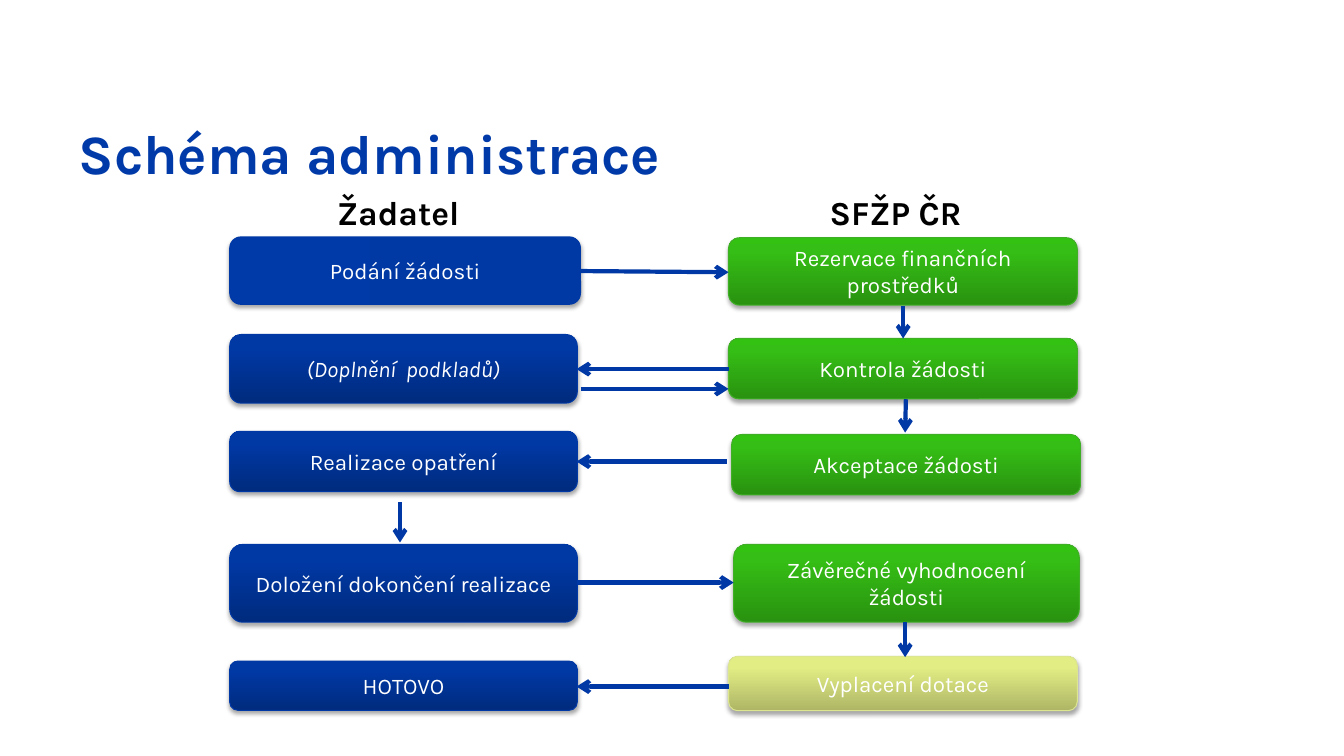
"""Build the slide showing how a grant application is administered."""
from lxml.etree import SubElement
from pptx import Presentation
from pptx.dml.color import RGBColor
from pptx.enum.shapes import MSO_CONNECTOR, MSO_SHAPE
from pptx.enum.text import MSO_ANCHOR, PP_ALIGN
from pptx.oxml.ns import qn
from pptx.util import Cm, Pt

FONT = "Karla"
TITLE_BLUE, ARROW_BLUE, WHITE, BLACK = "003AA9", "0039A5", "FFFFFF", "000000"
STOPS = (0, 80, 100)
BLUE = (("002B7E", "0038A4", "0038A5"), ARROW_BLUE, 270)
FLAT_BLUE = ((TITLE_BLUE, "0038A4", "0038A5"), ARROW_BLUE, 0)
GREEN = (("299210", "35BE15", "33C212"), "3FAF26", 270)
LIME = (("AEB666", "E2ED84", "E4F083"), "DCE590", 270)

APPLICANT_LEFT, APPLICANT_WIDTH = 5.79, 8.76
FUND_WIDTH = 8.79
APPLICANT_STEPS = [
    ("Podání žádosti", 5.97, 8.84, 1.7, FLAT_BLUE),
    ("(Doplnění  podkladů)", 8.43, APPLICANT_WIDTH, 1.73, BLUE),
    ("Realizace opatření", 10.87, APPLICANT_WIDTH, 1.52, BLUE),
    ("Doložení dokončení realizace", 13.72, APPLICANT_WIDTH, 1.96, BLUE),
    ("HOTOVO", 16.66, APPLICANT_WIDTH, 1.24, BLUE),
]
FUND_STEPS = [
    ("Rezervace finančních prostředků", 18.36, 5.99, FUND_WIDTH, 1.7, GREEN),
    ("Kontrola žádosti", 18.36, 8.53, FUND_WIDTH, 1.52, GREEN),
    ("Akceptace žádosti", 18.44, 10.95, FUND_WIDTH, 1.52, GREEN),
    ("Závěrečné vyhodnocení žádosti", 18.49, 13.72, 8.71, 1.96, GREEN),
    ("Vyplacení dotace", 18.36, 16.54, FUND_WIDTH, 1.37, LIME),
]
ARROWS = [
    (14.63, 6.83, 18.36, 6.86),
    (22.76, 7.7, 22.76, 8.53),
    (18.36, 9.3, 14.53, 9.3),
    (14.63, 9.8, 18.36, 9.8),
    (22.83, 10.06, 22.81, 10.9),
    (18.31, 11.63, 14.53, 11.63),
    (10.08, 12.65, 10.08, 13.67),
    (14.53, 14.68, 18.49, 14.68),
    (22.81, 15.67, 22.81, 16.56),
    (18.36, 17.3, 14.53, 17.3),
]


def rgb(value):
    """Turn a hex string into a colour."""
    return RGBColor.from_string(value)


def write_text(frame, text, size, color, bold=False, align=PP_ALIGN.CENTER):
    """Fill a text frame with one formatted paragraph."""
    frame.text = text
    paragraph = frame.paragraphs[0]
    paragraph.alignment = align
    font = paragraph.runs[0].font
    font.name, font.size, font.bold = FONT, Pt(size), bold
    font.color.rgb = rgb(color)
    return font


def add_gradient(shape, colors, angle):
    """Give a shape a linear gradient fill."""
    properties = shape._element.spPr
    gradient = SubElement(properties, qn("a:gradFill"), rotWithShape="1")
    stops = SubElement(gradient, qn("a:gsLst"))
    for position, color in zip(STOPS, colors):
        stop = SubElement(stops, qn("a:gs"), pos=str(position * 1000))
        SubElement(stop, qn("a:srgbClr"), val=color)
    SubElement(gradient, qn("a:lin"), ang=str(angle * 60000), scaled="0")
    properties.find(qn("a:prstGeom")).addnext(gradient)


def add_shadow(shape):
    """Give a shape a soft shadow below it."""
    shape.shadow.inherit = False
    effects = shape._element.spPr.find(qn("a:effectLst"))
    shadow = SubElement(effects, qn("a:outerShdw"), blurRad=str(Pt(3.1)),
                        dist=str(Pt(1.8)), dir="5400000", rotWithShape="0")
    color = SubElement(shadow, qn("a:srgbClr"), val=BLACK)
    SubElement(color, qn("a:alpha"), val="35000")


def add_step(slide, text, left, top, width, height, style):
    """Draw one rounded step of the process."""
    colors, outline, angle = style
    step = slide.shapes.add_shape(MSO_SHAPE.ROUNDED_RECTANGLE, Cm(left),
                                  Cm(top), Cm(width), Cm(height))
    step.line.color.rgb = rgb(outline)
    step.line.width = Pt(0.75)
    add_gradient(step, colors, angle)
    add_shadow(step)
    step.text_frame.word_wrap = True
    step.text_frame.vertical_anchor = MSO_ANCHOR.MIDDLE
    font = write_text(step.text_frame, text, 16, WHITE)
    font.italic = text.startswith("(")


def add_arrow(slide, *ends):
    """Draw an arrow between two points."""
    arrow = slide.shapes.add_connector(MSO_CONNECTOR.STRAIGHT, *map(Cm, ends))
    arrow.line.color.rgb = rgb(ARROW_BLUE)
    arrow.line.width = Pt(3)
    SubElement(arrow.line._get_or_add_ln(), qn("a:tailEnd"), type="arrow")
    SubElement(arrow._element.spPr, qn("a:effectLst"))


def add_heading(slide, text, left, top, width):
    """Write the heading of a column."""
    heading = slide.shapes.add_textbox(Cm(left), Cm(top), Cm(width), Cm(1.27))
    heading.text_frame.word_wrap = True
    write_text(heading.text_frame, text, 24, BLACK, bold=True)


def set_title(slide, text):
    """Place and format the slide title."""
    title = slide.shapes.title
    title.left, title.top = Cm(1.73), Cm(2.77)
    title.width, title.height = Cm(15.19), Cm(1.91)
    frame = title.text_frame
    frame.word_wrap = True
    frame.margin_bottom = 0
    frame.vertical_anchor = MSO_ANCHOR.BOTTOM
    write_text(frame, text, 39.6, TITLE_BLUE, bold=True, align=PP_ALIGN.LEFT)


def main():
    """Build and save the presentation."""
    presentation = Presentation()
    presentation.slide_width, presentation.slide_height = Cm(33.87), Cm(19.05)
    slide = presentation.slides.add_slide(presentation.slide_layouts[5])
    set_title(slide, "Schéma administrace")
    add_heading(slide, "Žadatel", 8.03, 4.72, 4.01)
    add_heading(slide, "SFŽP ČR", 20.6, 4.7, 3.94)
    for text, *place in APPLICANT_STEPS:
        add_step(slide, text, APPLICANT_LEFT, *place)
    for step in FUND_STEPS:
        add_step(slide, *step)
    for ends in ARROWS:
        add_arrow(slide, *ends)
    presentation.save("out.pptx")


if __name__ == "__main__":
    main()
